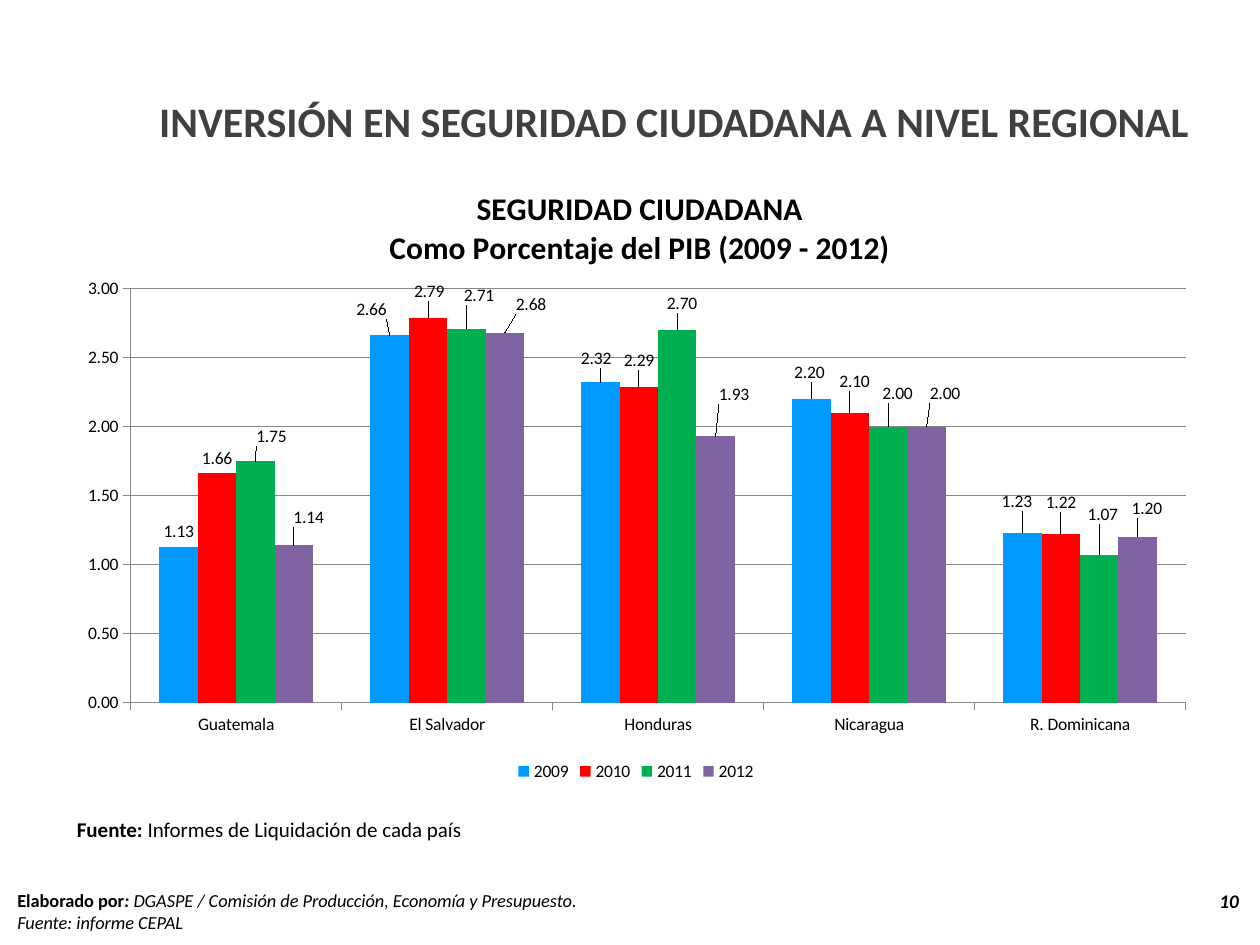
from lxml.etree import SubElement
from pptx import Presentation
from pptx.chart.data import CategoryChartData
from pptx.dml.color import RGBColor
from pptx.enum.chart import XL_CHART_TYPE as ChartType, XL_LABEL_POSITION as LabelPosition
from pptx.enum.chart import XL_LEGEND_POSITION as LegendPosition, XL_TICK_MARK as TickMark
from pptx.enum.text import MSO_ANCHOR as Anchor, PP_ALIGN as Align
from pptx.oxml import parse_xml
from pptx.oxml.ns import nsdecls, qn
from pptx.util import Cm, Pt

FONT = "Calibri"
COLORS = {"title": "404040", "text": "000000", "grid": "878787",
          "2009": "0099FF", "2010": "FF0000", "2011": "00B050", "2012": "8064A2"}
COUNTRIES = ["Guatemala", "El Salvador", "Honduras", "Nicaragua", "R. Dominicana"]
SPENDING = {
    "2009": [1.13, 2.66, 2.32, 2.2, 1.23],
    "2010": [1.66, 2.79, 2.29, 2.1, 1.22],
    "2011": [1.75, 2.71, 2.7, 2, 1.07],
    "2012": [1.14, 2.68, 1.93, 2, 1.2],
}
# Label shifts from the bar end, in percent of the chart's width and height
LABEL_SHIFTS = {
    "2009": [(0, 0), (-1.6, -1.8), (-0.4, -1.4), (-0.2, -1.9), (-0.5, -2.6)],
    "2010": [(0, 0), (0.1, -1.8), (0, -1.8), (0.4, -2.6), (0, -2.7)],
    "2011": [(1.4, -1.6), (1.1, -2.9), (0.4, -1.9), (0.8, -2.9), (0.3, -4.1)],
    "2012": [(1.3, -2.1), (2.3, -2.2), (1.6, -4.3), (1.6, -2.9), (0.8, -2.2)],
}


def rgb(name):
    return RGBColor.from_string(COLORS[name])


def style_font(font, size, color="text", bold=False, italic=False):
    font.name = FONT
    font.size = Pt(size)
    font.bold = bold
    font.italic = italic
    font.color.rgb = rgb(color)


def manual_layout(modes, **percents):
    """Return a chart layout element; modes come first, then x, y, w, h."""
    layout = parse_xml(f"<c:layout {nsdecls('c')}/>")
    manual = SubElement(layout, qn("c:manualLayout"))
    percents = {key: str(round(value / 100, 4)) for key, value in percents.items()}
    for tag, value in {**modes, **percents}.items():
        SubElement(manual, qn(f"c:{tag}")).set("val", value)
    return layout


def replace_layout(parent, layout, index):
    for old in parent.findall(qn("c:layout")):
        parent.remove(old)
    parent.insert(index, layout)


def add_title(page, text):
    title = page.shapes.title
    title.left, title.top, title.width, title.height = Cm(2.11), Cm(1.8), Cm(22.96), Cm(1.27)
    frame = title.text_frame
    frame.text = text
    frame.word_wrap = True
    frame.vertical_anchor = Anchor.MIDDLE
    paragraph = frame.paragraphs[0]
    paragraph.alignment = Align.CENTER
    style_font(paragraph.runs[0].font, 24, "title", bold=True)


def add_text(page, left, top, width, height, size, paragraphs, wrap=False):
    """Add a text box; each paragraph lists (text, bold, italic) spans."""
    box = page.shapes.add_textbox(Cm(left), Cm(top), Cm(width), Cm(height))
    frame = box.text_frame
    frame.word_wrap = wrap
    for number, spans in enumerate(paragraphs):
        paragraph = frame.add_paragraph() if number else frame.paragraphs[0]
        for text, bold, italic in spans:
            span = paragraph.add_run()
            span.text = text
            style_font(span.font, size, bold=bold, italic=italic)


def style_axes(chart):
    for axis in (chart.category_axis, chart.value_axis):
        axis.major_tick_mark = TickMark.OUTSIDE
        axis.minor_tick_mark = TickMark.NONE
        axis.format.line.color.rgb = rgb("grid")
        style_font(axis.tick_labels.font, 10)
    values = chart.value_axis
    values.minimum_scale, values.maximum_scale, values.major_unit = 0, 3, 0.5
    values.tick_labels.number_format = "0.00"
    values.tick_labels.number_format_is_linked = False
    values.has_major_gridlines = True
    values.major_gridlines.format.line.color.rgb = rgb("grid")


def style_series(series):
    series.format.fill.solid()
    series.format.fill.fore_color.rgb = rgb(series.name)
    labels = series.data_labels
    labels.show_value = True
    labels.number_format = "0.00"
    labels.number_format_is_linked = False
    labels.position = LabelPosition.OUTSIDE_END
    style_font(labels.font, 10)
    shifts = LABEL_SHIFTS[series.name]
    moved = [index for index, shift in enumerate(shifts) if any(shift)]
    for index in moved:
        series.points[index].data_label.position = LabelPosition.OUTSIDE_END
    for index, label in zip(moved, labels._element.findall(qn("c:dLbl"))):
        x, y = shifts[index]
        replace_layout(label, manual_layout({}, x=x, y=y), 1)


def add_spending_chart(page):
    data = CategoryChartData(number_format="0.00")
    data.categories = COUNTRIES
    for year, values in SPENDING.items():
        data.add_series(year, values)
    chart = page.shapes.add_chart(ChartType.COLUMN_CLUSTERED, Cm(1.3), Cm(3.2),
                                  Cm(23.04), Cm(12.65), data).chart
    style_font(chart.font, 10)
    chart.has_title = True
    frame = chart.chart_title.text_frame
    frame.text = "SEGURIDAD CIUDADANA\nComo Porcentaje del PIB (2009 - 2012)"
    for paragraph in frame.paragraphs:
        style_font(paragraph.runs[0].font, 18, bold=True)
    edges = {"xMode": "edge", "yMode": "edge"}
    replace_layout(chart.chart_title._element, manual_layout(edges, x=28.1, y=4.1), 1)
    chart.has_legend = True
    chart.legend.position = LegendPosition.BOTTOM
    chart.legend.include_in_layout = False
    style_font(chart.legend.font, 10)
    style_axes(chart)
    plot = chart.plots[0]
    plot.gap_width, plot.overlap, plot.vary_by_categories = 150, 0, False
    for series in plot.series:
        style_series(series)
    plot_area = chart._chartSpace.chart.plotArea
    inner = {"layoutTarget": "inner", **edges}
    replace_layout(plot_area, manual_layout(inner, x=5.8, y=20.7, w=92.3, h=66), 0)


def main():
    deck = Presentation()
    deck.slide_width, deck.slide_height = Cm(25.4), Cm(19.05)
    page = deck.slides.add_slide(deck.slide_layouts[5])
    add_title(page, "INVERSIÓN EN SEGURIDAD CIUDADANA A NIVEL REGIONAL")
    add_text(page, 0.1, 17.8, 12.01, 1.14, 10.5, [
        [("Elaborado por", True, False), (": ", True, True),
         ("DGASPE / Comisión de Producción, Economía y Presupuesto.", False, True)],
        [("Fuente: informe CEPAL", False, True)],
    ], wrap=True)
    add_text(page, 24.33, 17.8, 0.91, 0.74, 11, [[("10", True, True)]])
    add_text(page, 1.3, 16.33, 8.41, 0.76, 12, [
        [("Fuente: ", True, False), ("Informes de Liquidación de cada país", False, False)],
    ])
    add_spending_chart(page)
    deck.save("out.pptx")


if __name__ == "__main__":
    main()
